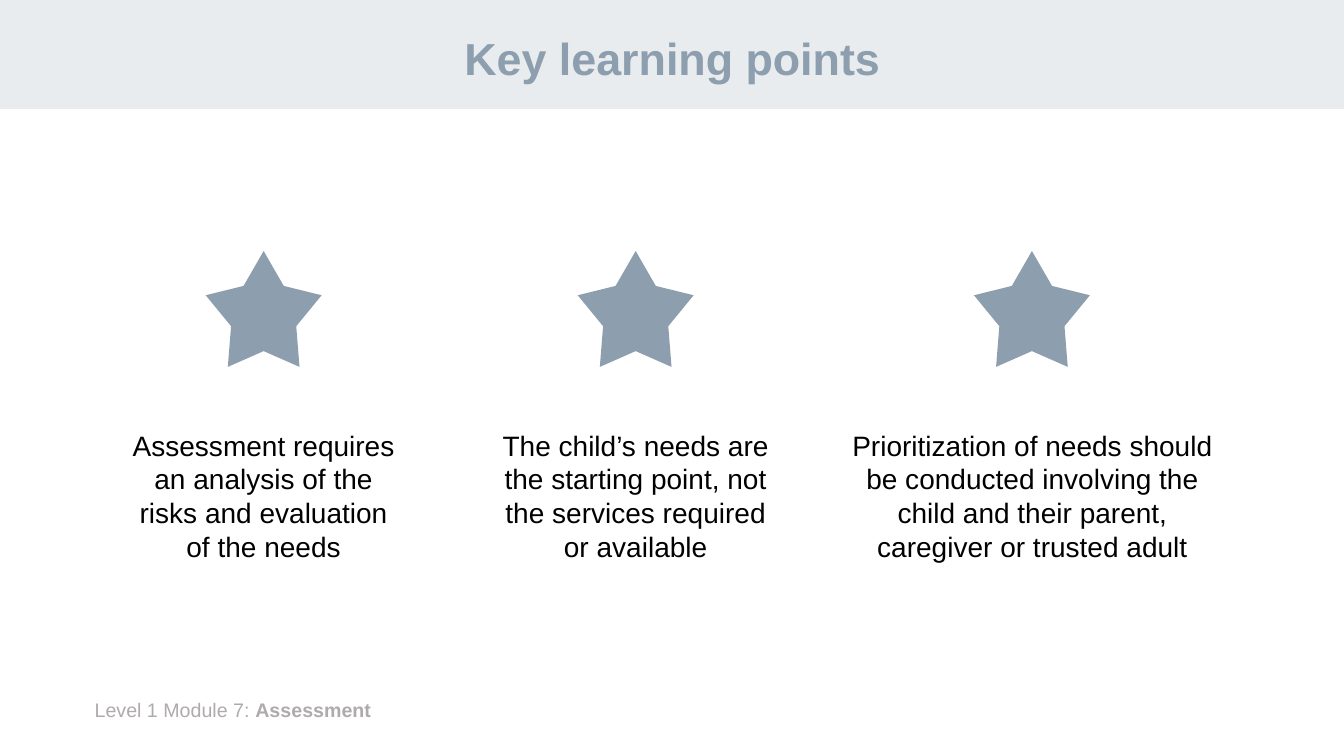
from dataclasses import dataclass

from pptx import Presentation
from pptx.dml.color import RGBColor
from pptx.enum.shapes import MSO_SHAPE
from pptx.enum.text import MSO_ANCHOR, MSO_AUTO_SIZE, PP_ALIGN
from pptx.util import Emu, Pt

RECT = MSO_SHAPE.RECTANGLE
STAR = MSO_SHAPE.STAR_5_POINT
CENTER = PP_ALIGN.CENTER
LEFT = PP_ALIGN.LEFT
MIDDLE = MSO_ANCHOR.MIDDLE
NO_AUTOSIZE = MSO_AUTO_SIZE.NONE

BAND = RGBColor(0xE8, 0xEC, 0xEF)
SLATE = RGBColor(0x8D, 0x9E, 0xAE)
BLACK = RGBColor(0, 0, 0)
GRAY = RGBColor(0xAF, 0xAB, 0xAB)

FONT = "Arial"
TITLE_ONLY = 5
SLIDE_W, SLIDE_H = 1333, 750
STAR_TOP, STAR_SIZE, STAR_DEPTH = 249, 115, 0.281
POINT_TOP, POINT_H = 420, 145


@dataclass(frozen=True)
class Point:
    left: int
    width: int
    text: str


POINTS = [
    Point(120, 283, "Assessment requires an analysis of the risks and evaluation of the needs"),
    Point(477, 307, "The child’s needs are the starting point, not the services required or available"),
    Point(829, 390, "Prioritization of needs should be conducted involving the child and their parent, "
                    "caregiver or trusted adult"),
]


def px(n: int) -> Emu:
    return Emu(n * 9144)


def format_run(r, size: int, color: RGBColor, bold: bool = False) -> None:
    r.font.name = FONT
    r.font.size = Pt(size)
    r.font.bold = bold
    r.font.color.rgb = color


def add_filled(s, kind, left: int, top: int, width: int, height: int, color: RGBColor):
    sp = s.shapes.add_shape(kind, px(left), px(top), px(width), px(height))
    sp.fill.solid()
    sp.fill.fore_color.rgb = color
    sp.line.fill.background()
    sp.shadow.inherit = False
    return sp


def add_text(s, left: int, top: int, width: int, height: int, text: str,
             size: int, color: RGBColor, align):
    sp = s.shapes.add_textbox(px(left), px(top), px(width), px(height))
    tf = sp.text_frame
    tf.word_wrap = True
    tf.text = text
    p = tf.paragraphs[0]
    p.alignment = align
    format_run(p.runs[0], size, color)
    return p


def format_title(s, text: str) -> None:
    sp = s.shapes.title
    sp.left, sp.top, sp.width, sp.height = px(92), px(13), px(1150), px(95)
    tf = sp.text_frame
    tf.text = text
    tf.auto_size = NO_AUTOSIZE
    tf.vertical_anchor = MIDDLE
    p = tf.paragraphs[0]
    p.alignment = CENTER
    p.line_spacing = 0.9
    format_run(p.runs[0], 32, SLATE, bold=True)


def add_point(s, point: Point) -> None:
    star_left = point.left + (point.width - STAR_SIZE) // 2
    star = add_filled(s, STAR, star_left, STAR_TOP, STAR_SIZE, STAR_SIZE, SLATE)
    star.adjustments[0] = STAR_DEPTH
    add_text(s, point.left, POINT_TOP, point.width, POINT_H, point.text, 20, BLACK, CENTER)


def main() -> None:
    prs = Presentation()
    prs.slide_width, prs.slide_height = px(SLIDE_W), px(SLIDE_H)
    s = prs.slides.add_slide(prs.slide_layouts[TITLE_ONLY])

    band = add_filled(s, RECT, 0, 0, SLIDE_W, 108, BAND)
    s.shapes.title.element.addprevious(band.element)
    format_title(s, "Key learning points")

    for point in POINTS:
        add_point(s, point)

    p = add_text(s, 84, 687, 1135, 34, "Level 1 Module 7: ", 14, GRAY, LEFT)
    r = p.add_run()
    r.text = "Assessment"
    format_run(r, 14, GRAY, bold=True)

    prs.save("out.pptx")


if __name__ == "__main__":
    main()
